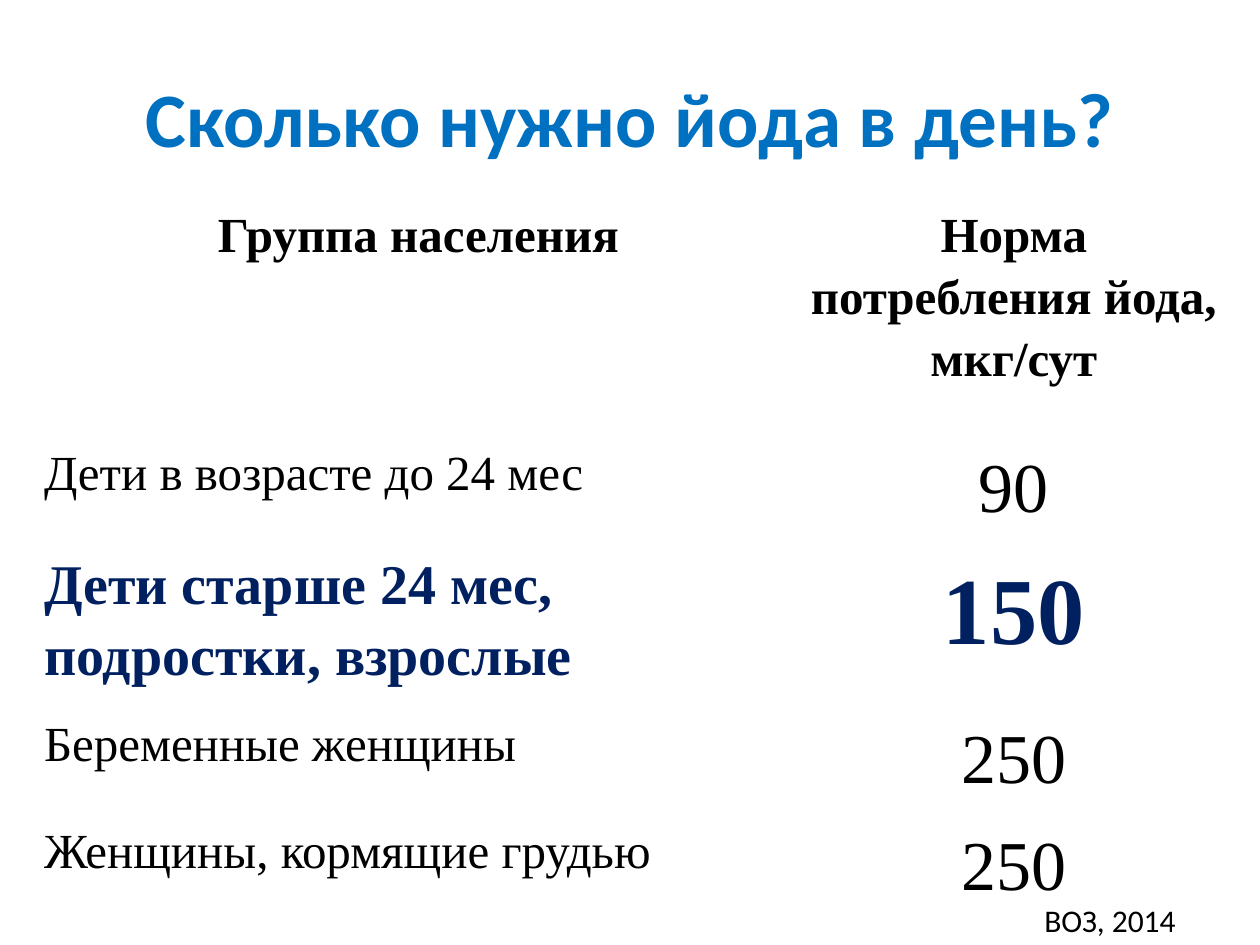
import pptx
import pptx.dml.color
import pptx.enum.text
import pptx.util

Pt = pptx.util.Pt
RGBColor = pptx.dml.color.RGBColor
ALIGN = pptx.enum.text.PP_ALIGN
ANCHOR = pptx.enum.text.MSO_ANCHOR

BLACK = RGBColor(0x00, 0x00, 0x00)
BLUE = RGBColor(0x00, 0x70, 0xC0)
NAVY = RGBColor(0x00, 0x20, 0x60)

TITLE = "Сколько нужно йода в день?"
SOURCE = "ВОЗ, 2014"
HEADER = ("Группа населения", "Норма потребления йода, мкг/сут")
NORMS = [
    ("Дети в возрасте до 24 мес", "90"),
    ("Дети старше 24 мес, подростки, взрослые", "150"),
    ("Беременные женщины", "250"),
    ("Женщины, кормящие грудью", "250"),
]
KEY_NORM = "150"

COLUMN_WIDTHS = (433.5, 247)
ROW_HEIGHTS = (136, 36, 60.5, 36, 36)
CELL_MARGIN = Pt(2.9)
CELL_SPACING = {"line_spacing": 1.15, "space_before": Pt(7.2), "space_after": Pt(7.2)}


def write(frame, text, align, size, font, color, bold=False, spacing=None):
    paragraph = frame.paragraphs[0]
    paragraph.alignment = align
    for key, value in (spacing or {}).items():
        setattr(paragraph, key, value)
    run = paragraph.add_run()
    run.text = text
    for key, value in {"size": Pt(size), "name": font, "bold": bold}.items():
        setattr(run.font, key, value)
    run.font.color.rgb = color


def add_label(slide, box, anchor, *text_format):
    frame = slide.shapes.add_textbox(*map(Pt, box)).text_frame
    frame.word_wrap = True
    frame.vertical_anchor = anchor
    write(frame, *text_format)


def add_norms(slide):
    rows = [HEADER] + NORMS
    table = slide.shapes.add_table(
        len(rows), len(HEADER), Pt(22.3), Pt(111.6),
        Pt(sum(COLUMN_WIDTHS)), Pt(sum(ROW_HEIGHTS))).table
    table.first_row = table.horz_banding = False
    for column, width in zip(table.columns, COLUMN_WIDTHS):
        column.width = Pt(width)
    for r, (texts, height) in enumerate(zip(rows, ROW_HEIGHTS)):
        table.rows[r].height = Pt(height)
        header, key = r == 0, texts[1] == KEY_NORM
        sizes = (28, 28) if header else (32, 54) if key else (28, 40)
        for c, (text, size) in enumerate(zip(texts, sizes)):
            cell = table.cell(r, c)
            cell.fill.background()
            for side in ("left", "right", "top", "bottom"):
                setattr(cell, "margin_" + side, CELL_MARGIN)
            align = ALIGN.CENTER if header or c == 1 else ALIGN.LEFT
            write(cell.text_frame, text, align, size, "Times New Roman",
                  NAVY if key else BLACK, header or key, CELL_SPACING)


def main():
    deck = pptx.Presentation()
    deck.slide_width, deck.slide_height = Pt(720), Pt(540)
    slide = deck.slides.add_slide(deck.slide_layouts[6])
    add_label(slide, (36, 21.6, 648, 90), ANCHOR.MIDDLE,
              TITLE, ALIGN.CENTER, 44, "Calibri", BLUE, True)
    add_norms(slide)
    add_label(slide, (589.7, 511.2, 130.3, 28.8), ANCHOR.TOP,
              SOURCE, ALIGN.LEFT, 18, "Calibri", BLACK)
    deck.save("out.pptx")


if __name__ == "__main__":
    main()
